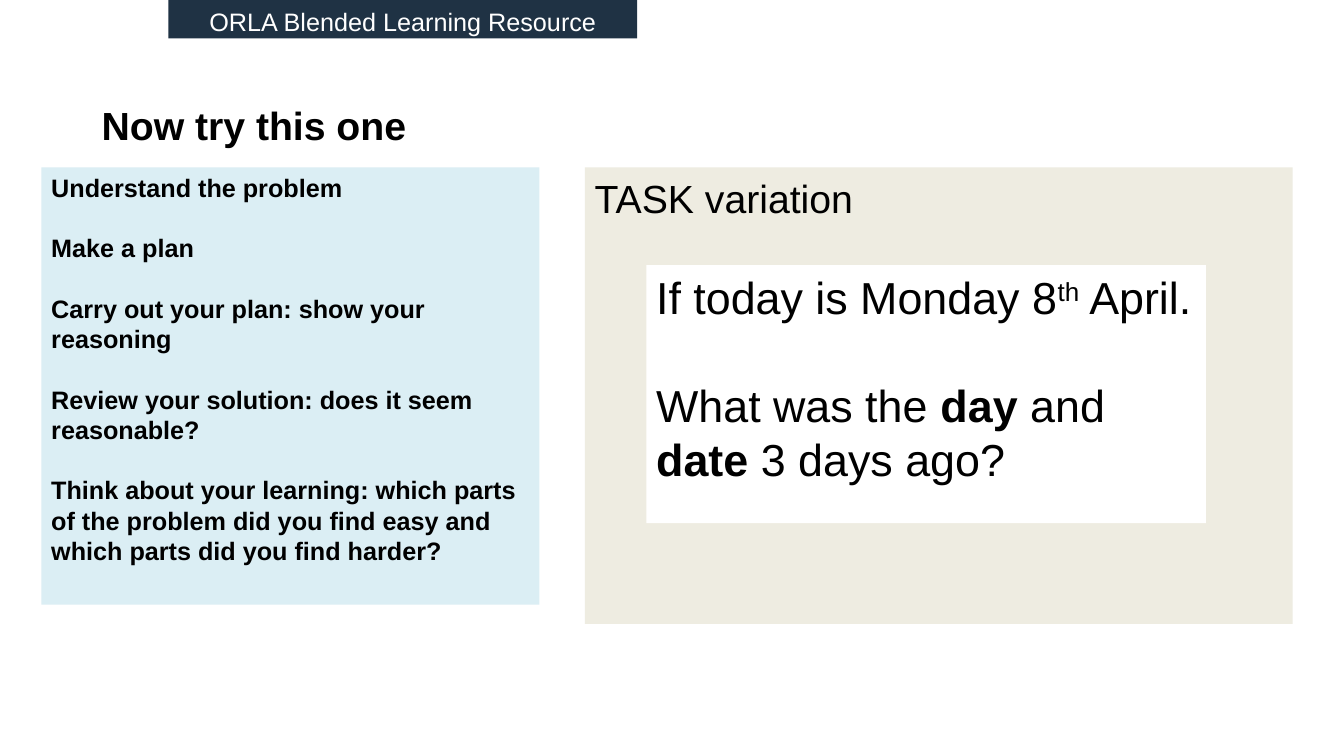
from pptx import Presentation
from pptx.dml.color import RGBColor as RGB
from pptx.enum.shapes import MSO_SHAPE as Shape
from pptx.enum.text import MSO_ANCHOR as Anchor, PP_ALIGN as Align
from pptx.util import Inches, Pt

COLORS = {
    "black": "000000",
    "white": "FFFFFF",
    "navy": "1F3244",
    "blue": "DBEEF4",
    "beige": "EEECE1",
}


class Deck:
    font = "Arial"

    def __init__(self):
        self.prs = Presentation()
        self.prs.slide_width = Inches(13.33)
        self.prs.slide_height = Inches(7.5)
        self.slide = self.prs.slides.add_slide(self.prs.slide_layouts[6])

    def color(self, name):
        return RGB.from_string(COLORS[name])

    def text(self, shape, paras, size, color="black", bold=False, gap=0,
             align=Align.LEFT, anchor=Anchor.TOP, top=0.05):
        """Each paragraph is a list of (text, style) runs."""
        frame = shape.text_frame
        frame.word_wrap = True
        frame.vertical_anchor = anchor
        frame.margin_top = Inches(top)
        for i, runs in enumerate(paras):
            para = frame.add_paragraph() if i else frame.paragraphs[0]
            para.alignment = align
            if i:
                para.space_before = Pt(gap)
            para.font.name = self.font
            para.font.size = Pt(size)
            para.font.bold = bold
            para.font.color.rgb = self.color(color)
            for words, style in runs:
                run = para.add_run()
                run.text = words
                # Run fonts override the paragraph defaults
                run.font.name = self.font
                run.font.size = Pt(size)
                run.font.bold = bold or style == "bold"
                run.font.color.rgb = self.color(color)
                if style == "super":
                    run.font._element.set("baseline", "30000")

    def label(self, box, paras, size, **style):
        shape = self.slide.shapes.add_textbox(*map(Inches, box))
        self.text(shape, paras, size, **style)

    def panel(self, box, fill, paras, size, **style):
        shape = self.slide.shapes.add_shape(Shape.RECTANGLE, *map(Inches, box))
        shape.shadow.inherit = False
        shape.fill.solid()
        shape.fill.fore_color.rgb = self.color(fill)
        shape.line.fill.background()
        self.text(shape, paras, size, **style)


def main():
    deck = Deck()

    # Title
    deck.label((0.91, 0.92, 9, 0.64), [[("Now try this one", "")]], 28,
               bold=True, anchor=Anchor.MIDDLE)

    # Problem-solving steps
    steps = [
        "Understand the problem",
        "Make a plan",
        "Carry out your plan: show your reasoning",
        "Review your solution: does it seem reasonable?",
        "Think about your learning: which parts of the problem did you "
        "find easy and which parts did you find harder?",
    ]
    deck.panel((0.41, 1.66, 4.94, 4.34), "blue",
               [[(step, "")] for step in steps], 18, bold=True, gap=21.6)

    # Header band
    deck.panel((1.67, 0, 4.65, 0.38), "navy",
               [[("ORLA Blended Learning Resource", "")]], 18,
               color="white", align=Align.CENTER, top=0.06)

    # Task panel
    deck.panel((5.8, 1.66, 7.02, 4.53), "beige",
               [[("TASK variation", "")]], 28, top=0.07)

    # Question card
    question = [
        [("If today is Monday 8", ""), ("th", "super"), (" April.", "")],
        [("What was the ", ""), ("day", "bold"), (" and ", ""),
         ("date", "bold"), (" 3 days ago?", "")],
    ]
    deck.panel((6.41, 2.63, 5.55, 2.56), "white", question, 32, gap=38.4)

    deck.prs.save("out.pptx")


if __name__ == "__main__":
    main()
